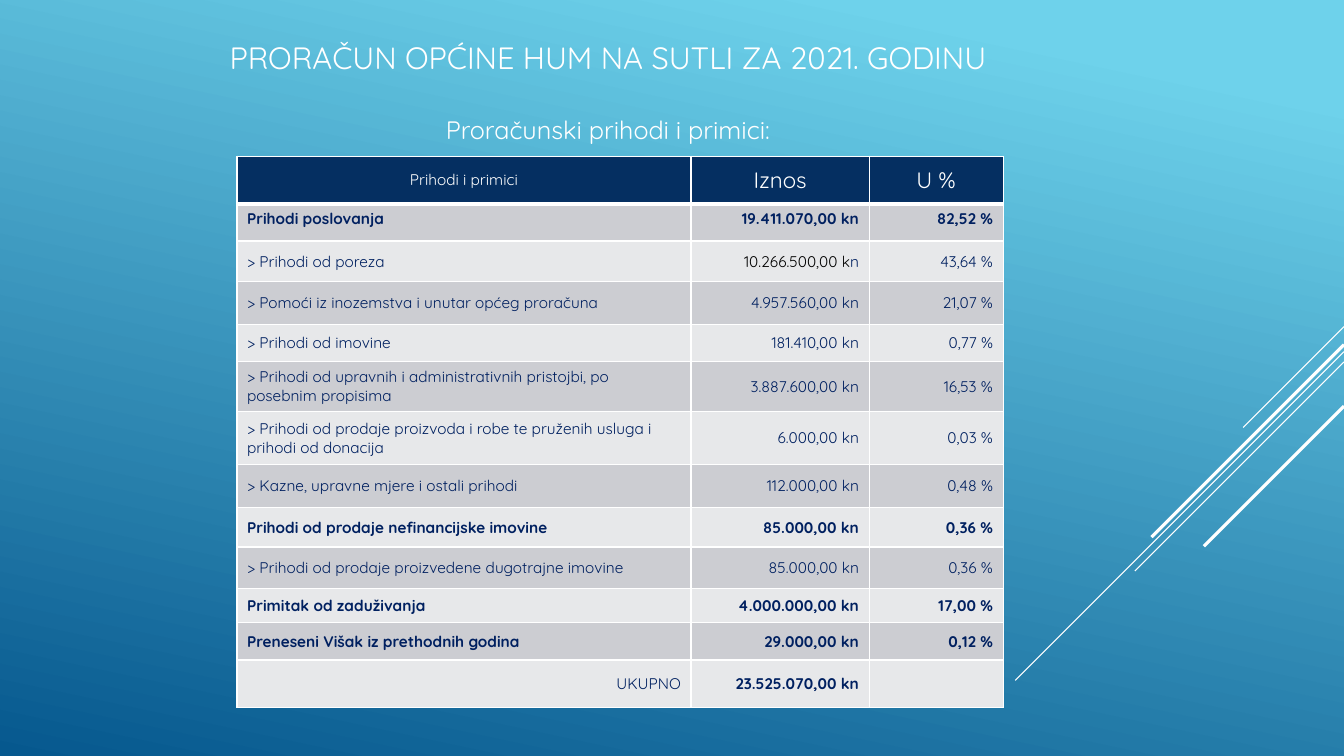
from dataclasses import dataclass

from lxml.etree import SubElement
from pptx import Presentation
from pptx.dml.color import RGBColor
from pptx.enum.shapes import MSO_CONNECTOR as Connector
from pptx.enum.text import MSO_ANCHOR as Anchor, MSO_AUTO_SIZE as AutoSize, PP_ALIGN as Align
from pptx.oxml import parse_xml
from pptx.oxml.ns import nsdecls, qn
from pptx.util import Inches, Pt


@dataclass(frozen=True)
class Theme:
    """Colours, font and type sizes of the slide."""
    font: str = "Quicksand"
    white: str = "FFFFFF"
    black: str = "000000"
    navy: str = "002060"
    header: str = "052F61"
    bands: tuple = ("CCCDD2", "E7E8EA")
    sky: str = "6ED2EB"
    sea: str = "06588E"
    title: float = 22
    subtitle: float = 18
    heading: float = 16
    body: float = 11
    thin: float = 0.75
    thick: float = 2.25
    border: float = 1
    rule: float = 3


@dataclass(frozen=True)
class Box:
    """A rectangle in slide units."""
    left: int
    top: int
    width: int
    height: int


THEME = Theme()
SLIDE_WIDTH, SLIDE_HEIGHT = Inches(13.33), Inches(7.5)
COLUMNS = (4.51, 1.77, 1.33)
ROWS = (0.47, 0.37, 0.4, 0.43, 0.36, 0.5, 0.52, 0.43, 0.39, 0.41, 0.34, 0.37, 0.47)
HEADINGS = (("Prihodi i primici", THEME.body), ("Iznos", THEME.heading), ("U %", THEME.heading))
BUDGET = (
    ("Prihodi poslovanja", "19.411.070,00 kn", "82,52 %"),
    ("> Prihodi od poreza", "10.266.500,00 kn", "43,64 %"),
    ("> Pomoći iz inozemstva i unutar općeg proračuna", "4.957.560,00 kn", "21,07 %"),
    ("> Prihodi od imovine", "181.410,00 kn", "0,77 %"),
    ("> Prihodi od upravnih i administrativnih pristojbi, po posebnim propisima",
     "3.887.600,00 kn", "16,53 %"),
    ("> Prihodi od prodaje proizvoda i robe te pruženih usluga i prihodi od donacija",
     "6.000,00 kn", "0,03 %"),
    ("> Kazne, upravne mjere i ostali prihodi", "112.000,00 kn", "0,48 %"),
    ("Prihodi od prodaje nefinancijske imovine", "85.000,00 kn", "0,36 %"),
    ("> Prihodi od prodaje proizvedene dugotrajne imovine", "85.000,00 kn", "0,36 %"),
    ("Primitak od zaduživanja", "4.000.000,00 kn", "17,00 %"),
    ("Preneseni Višak iz prethodnih godina", "29.000,00 kn", "0,12 %"),
)
TOTAL = ("UKUPNO", "23.525.070,00 kn")
TAX_AMOUNT = BUDGET[1][1]
RAYS = ((0, 28.5, THEME.thin), (7.1, 92.9, THEME.thin), (10, 59.1, THEME.thin),
        (5.1, 54.4, THEME.thick), (22.5, 39.6, THEME.thick))


def area(left, top, width, height):
    """Return a box given in percent of the slide's size."""
    return Box(round(SLIDE_WIDTH * left / 100), round(SLIDE_HEIGHT * top / 100),
               round(SLIDE_WIDTH * width / 100), round(SLIDE_HEIGHT * height / 100))


def add_text(paragraph, text, size, color, bold=False):
    """Append one formatted run."""
    run = paragraph.add_run()
    run.text = text
    font = run.font
    font.name, font.size, font.bold = THEME.font, Pt(size), bold
    font.color.rgb = RGBColor.from_string(color)


def paint_background(slide):
    """Fill the slide with the slanted blue gradient."""
    fill = slide.background.fill
    fill.gradient()
    fill.gradient_angle = 258
    for stop, position, color in zip(fill.gradient_stops, (0.1, 1), (THEME.sky, THEME.sea)):
        stop.position = position
        stop.color.rgb = RGBColor.from_string(color)


def draw_rays(slide, box):
    """Draw diagonals falling from the right edge of the box."""
    right = box.left + box.width
    for drop, length, weight in RAYS:
        top = box.top + round(box.height * drop / 100)
        reach = round(box.height * length / 100)
        ray = slide.shapes.add_connector(Connector.STRAIGHT, right, top, right - reach, top + reach)
        ray.line.color.rgb = RGBColor.from_string(THEME.white)
        ray.line.width = Pt(weight)
        SubElement(ray._element.spPr, qn("a:effectLst"))


def write_title(slide, box):
    """Place the title and its subtitle in the title placeholder."""
    title = slide.shapes.title
    title.left, title.top, title.width, title.height = box.left, box.top, box.width, box.height
    frame = title.text_frame
    frame.word_wrap, frame.auto_size = True, AutoSize.NONE
    frame.vertical_anchor = Anchor.MIDDLE
    heading, subtitle = frame.paragraphs[0], frame.add_paragraph()
    add_text(heading, "PRORAČUN OPĆINE HUM NA SUTLI ZA 2021. GODINU", THEME.title, THEME.white)
    add_text(subtitle, "Proračunski prihodi i primici:", THEME.subtitle, THEME.white)
    heading.alignment = subtitle.alignment = Align.CENTER
    subtitle.space_before = Pt(27.5)


def style_cell(cell, fill, top, bottom):
    """Set the fill and the four white borders of a cell."""
    cell.fill.solid()
    cell.fill.fore_color.rgb = RGBColor.from_string(fill)
    cell.vertical_anchor = Anchor.MIDDLE
    properties = cell._tc.get_or_add_tcPr()
    edges = (("lnL", THEME.border), ("lnR", THEME.border), ("lnT", top), ("lnB", bottom))
    for index, (edge, weight) in enumerate(edges):
        properties.insert(index, parse_xml(
            f'<a:{edge} {nsdecls("a")} w="{Pt(weight)}"><a:solidFill>'
            f'<a:srgbClr val="{THEME.white}"/></a:solidFill></a:{edge}>'))


def fill_cell(cell, alignment, runs):
    """Write runs of text, size, colour and weight into a cell."""
    paragraph = cell.text_frame.paragraphs[0]
    paragraph.alignment = alignment
    for run in runs:
        add_text(paragraph, *run)


def build_table(slide, box):
    """Build the table of revenues and receipts."""
    table = slide.shapes.add_table(len(ROWS), len(COLUMNS), box.left, box.top,
                                   box.width, box.height).table
    for column, share in zip(table.columns, COLUMNS):
        column.width = round(box.width * share / sum(COLUMNS))
    for row, share in zip(table.rows, ROWS):
        row.height = round(box.height * share / sum(ROWS))
    for index, row in enumerate(table.rows):
        fill = THEME.bands[(index - 1) % 2] if index else THEME.header
        top = THEME.rule if index == 1 else THEME.border
        bottom = THEME.border if index else THEME.rule
        for cell in row.cells:
            style_cell(cell, fill, top, bottom)
    for index, (text, size) in enumerate(HEADINGS):
        fill_cell(table.cell(0, index), Align.CENTER, [(text, size, THEME.white)])
    for row, entry in enumerate(BUDGET, 1):
        bold = not entry[0].startswith(">")
        for column, text in enumerate(entry):
            runs = [(text, THEME.body, THEME.navy, bold)]
            if text == TAX_AMOUNT:
                runs = [(text[:-1], THEME.body, THEME.black), (text[-1], THEME.body, THEME.navy)]
            fill_cell(table.cell(row, column), Align.RIGHT if column else Align.LEFT, runs)
    for cell in table.rows[1].cells:
        cell.vertical_anchor = Anchor.TOP
    for column, text in enumerate(TOTAL):
        fill_cell(table.cell(len(ROWS) - 1, column), Align.RIGHT,
                  [(text, THEME.body, THEME.navy, column == 1)])


def main():
    """Assemble and save the presentation."""
    presentation = Presentation()
    presentation.slide_width, presentation.slide_height = SLIDE_WIDTH, SLIDE_HEIGHT
    slide = presentation.slides.add_slide(presentation.slide_layouts[5])
    paint_background(slide)
    draw_rays(slide, area(75.54, 43.2, 24.46, 46.8))
    write_title(slide, area(5.55, 2.13, 79.37, 20))
    build_table(slide, area(17.63, 20.67, 57.01, 72.93))
    presentation.save("out.pptx")


if __name__ == "__main__":
    main()
